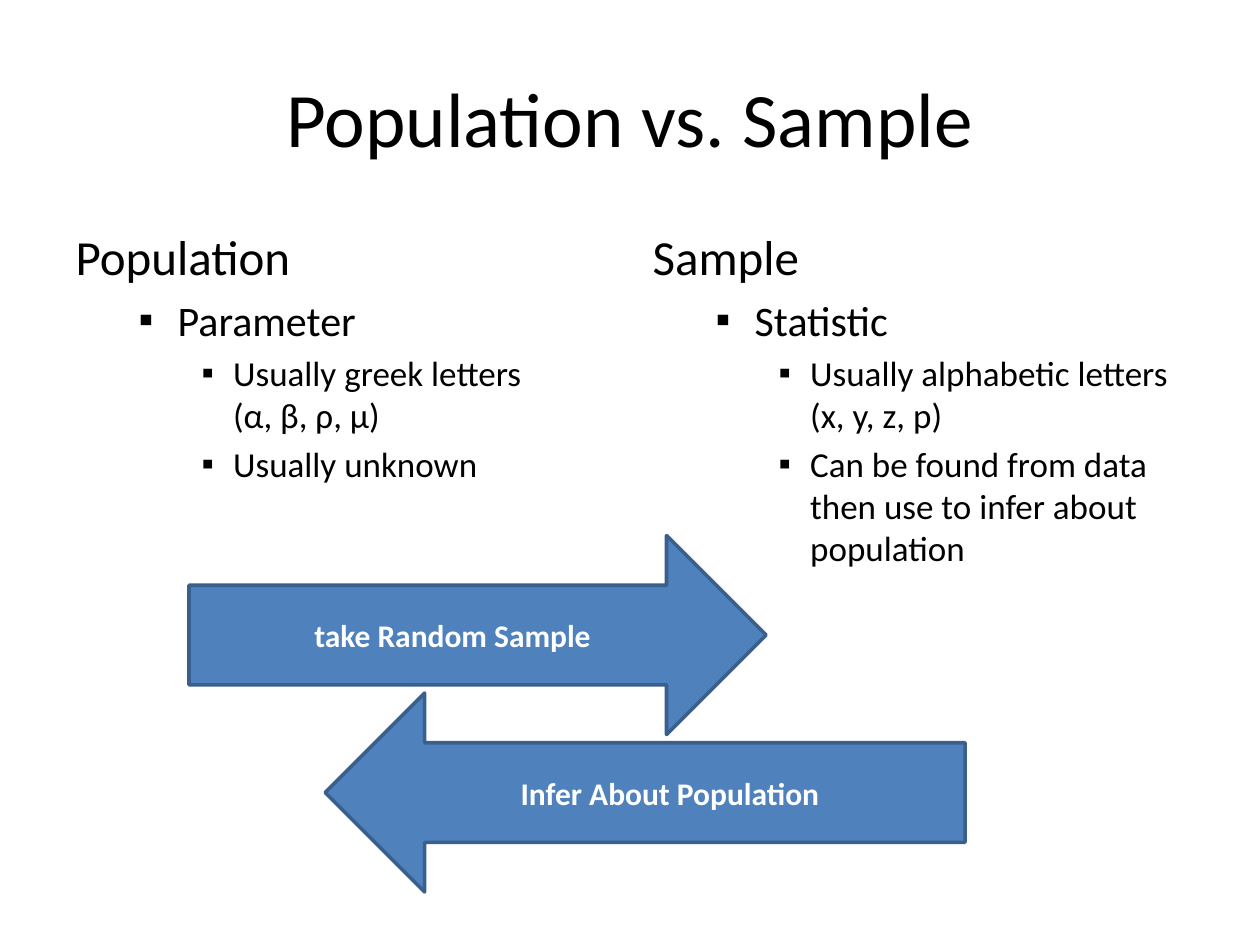
from dataclasses import dataclass

from lxml.etree import SubElement
from pptx import Presentation
from pptx.dml.color import RGBColor
from pptx.enum.shapes import MSO_SHAPE
from pptx.enum.text import MSO_ANCHOR, PP_ALIGN
from pptx.oxml.ns import qn
from pptx.util import Inches, Pt


@dataclass(frozen=True)
class Theme:
    font: str = "Calibri"
    text: str = "000000"
    on_fill: str = "FFFFFF"
    fill: str = "4F81BD"
    line: str = "3A5F8C"
    title_size: int = 44
    level_sizes: tuple = (28, 24, 20)
    arrow_size: int = 18
    level_indents: tuple = ((0.38, -0.38), (0.81, -0.31), (1.25, -0.25))
    bullet: str = "▪"


class SlideBuilder:
    def __init__(self, slide, theme):
        self.slide = slide
        self.theme = theme

    def place(self, sp, left, top, width, height):
        sp.left, sp.top = Inches(left), Inches(top)
        sp.width, sp.height = Inches(width), Inches(height)

    def add_run(self, p, text, size, color, bold=False):
        r = p.add_run()
        r.text = text
        r.font.name = self.theme.font
        r.font.size = Pt(size)
        r.font.bold = bold
        r.font.color.rgb = RGBColor.from_string(color)

    def title(self, text, *box):
        sp = self.slide.shapes.title
        self.place(sp, *box)
        sp.text_frame.vertical_anchor = MSO_ANCHOR.MIDDLE
        p = sp.text_frame.paragraphs[0]
        p.alignment = PP_ALIGN.CENTER
        self.add_run(p, text, self.theme.title_size, self.theme.text)

    def set_bullet(self, p, level):
        """Indent the paragraph for its level; only sublevels get a bullet."""
        margin, indent = self.theme.level_indents[level]
        p_pr = p._p.get_or_add_pPr()
        p_pr.set("marL", str(Inches(margin)))
        p_pr.set("indent", str(Inches(indent)))
        if level:
            SubElement(p_pr, qn("a:buFont"), typeface="Arial")
            SubElement(p_pr, qn("a:buChar"), char=self.theme.bullet)
        else:
            SubElement(p_pr, qn("a:buNone"))

    def outline(self, idx, items, *box):
        """Fill a body placeholder with (level, text) items."""
        sp = self.slide.placeholders[idx]
        self.place(sp, *box)
        tf = sp.text_frame
        for i, (level, text) in enumerate(items):
            p = tf.add_paragraph() if i else tf.paragraphs[0]
            p.level = level
            self.set_bullet(p, level)
            for n, line in enumerate(text.split("\n")):
                if n:
                    p.add_line_break()
                self.add_run(p, line, self.theme.level_sizes[level], self.theme.text)

    def arrow(self, shape, text, *box):
        sp = self.slide.shapes.add_shape(shape, *map(Inches, box))
        sp.shadow.inherit = False
        sp.fill.solid()
        sp.fill.fore_color.rgb = RGBColor.from_string(self.theme.fill)
        sp.line.color.rgb = RGBColor.from_string(self.theme.line)
        sp.line.width = Pt(2)
        tf = sp.text_frame
        tf.word_wrap = True
        tf.vertical_anchor = MSO_ANCHOR.MIDDLE
        p = tf.paragraphs[0]
        p.alignment = PP_ALIGN.CENTER
        self.add_run(p, text, self.theme.arrow_size, self.theme.on_fill, bold=True)


COLUMNS = [
    [(0, "Population"), (1, "Parameter"),
     (2, "Usually greek letters\n(α, β, ρ, μ)"), (2, "Usually unknown")],
    [(0, "Sample"), (1, "Statistic"),
     (2, "Usually alphabetic letters\n(x, y, z, p)"),
     (2, "Can be found from data then use to infer about population")],
]


def main():
    prs = Presentation()
    prs.slide_width, prs.slide_height = Inches(10), Inches(7.5)
    two_content = prs.slide_layouts[3]
    s = SlideBuilder(prs.slides.add_slide(two_content), Theme())

    s.title("Population vs. Sample", 0.5, 0.3, 9, 1.25)
    for i, items in enumerate(COLUMNS):
        s.outline(i + 1, items, 0.5 + i * 4.58, 1.75, 4.42, 4.95)
    s.arrow(MSO_SHAPE.RIGHT_ARROW, "take Random Sample", 1.5, 4.25, 4.58, 1.58)
    s.arrow(MSO_SHAPE.LEFT_ARROW, "Infer About Population", 2.58, 5.5, 5.08, 1.58)

    prs.save("out.pptx")


if __name__ == "__main__":
    main()
